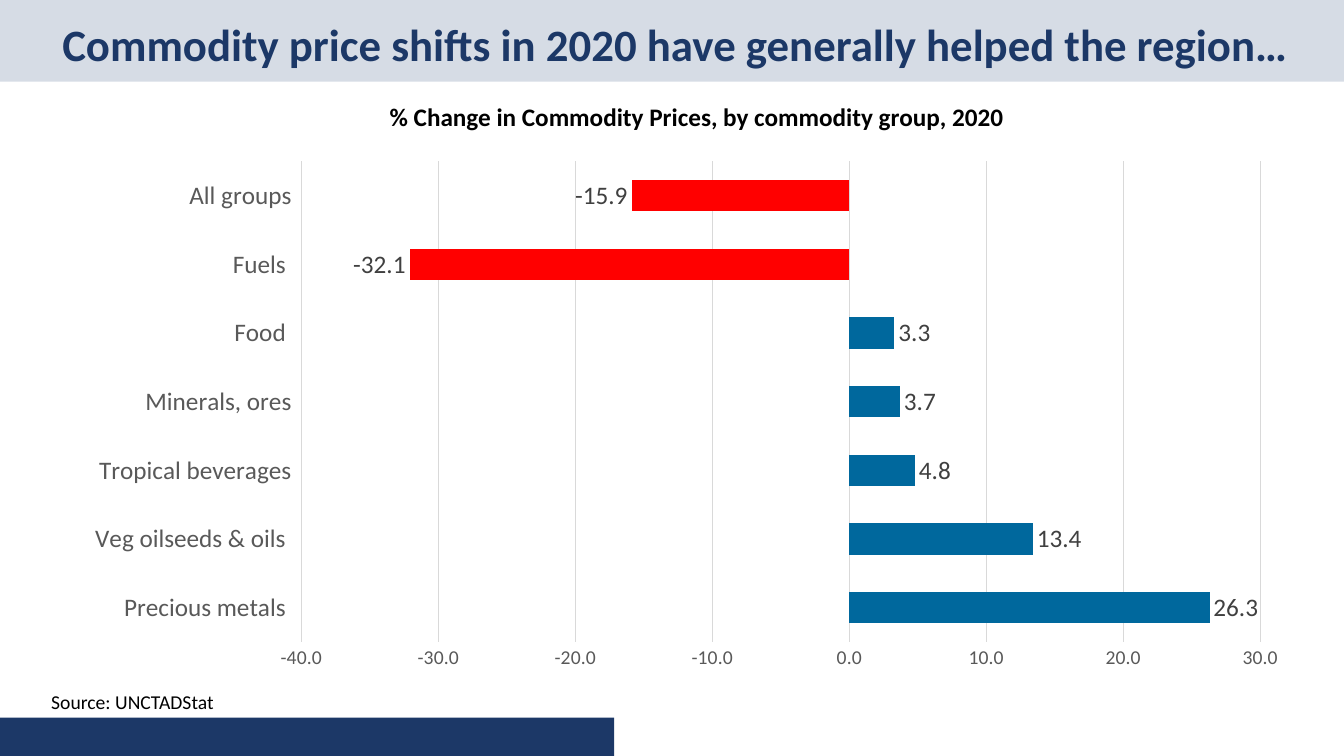
from lxml import etree
from pptx import Presentation
from pptx.chart.data import CategoryChartData
from pptx.dml.color import RGBColor
from pptx.enum import chart as ch, shapes, text
from pptx.oxml.ns import qn
from pptx.util import Inches, Pt

# Content
FONT = "Calibri"
NAVY, PALE, BLUE, RED = "1C3867", "D6DCE5", "00689D", "FF0000"
BLACK, GREY, DARK, GRID = "000000", "595959", "404040", "D9D9D9"

# Box, fill
BANDS = [
    ((0, 0, 13.33, 0.81), PALE),
    ((0, 7.12, 6.09, 0.38), NAVY),
]
# Text, box, size, colour, bold, centred
TEXTS = [
    ("Commodity price shifts in 2020 have generally helped the region…",
     (0.44, 0.15, 12.52, 0.64), 32, NAVY, True, True),
    ("% Change in Commodity Prices, by commodity group, 2020",
     (2.27, 0.96, 9.28, 0.4), 18, BLACK, True, True),
    ("Source: UNCTADStat", (0.41, 6.79, 2.5, 0.34), 14, BLACK, False, False),
]
# Bottom bar first
PRICES = [
    ("Precious metals ", 26.3),
    ("Veg oilseeds & oils ", 13.4),
    ("Tropical beverages", 4.8),
    ("Minerals, ores", 3.7),
    ("Food ", 3.3),
    ("Fuels ", -32.1),
    ("All groups", -15.9),
]
CHART_BOX = (0.7, 1.49, 12.23, 5.26)
PLOT_BOX = (2.99, 1.6, 9.51, 4.77)


def rgb(value):
    return RGBColor.from_string(value)


def inches(box):
    return [Inches(v) for v in box]


def set_font(font, size, color, bold=False):
    font.name, font.size, font.bold = FONT, Pt(size), bold
    font.color.rgb = rgb(color)


def set_fill(fill, color):
    fill.solid()
    fill.fore_color.rgb = rgb(color)


def add_text(s, words, box, size, color, bold, centred):
    tf = s.shapes.add_textbox(*inches(box)).text_frame
    tf.word_wrap = True
    tf.vertical_anchor = text.MSO_ANCHOR.MIDDLE
    p = tf.paragraphs[0]
    p.text = words
    p.alignment = text.PP_ALIGN.CENTER if centred else text.PP_ALIGN.LEFT
    if size > 30:
        p.line_spacing = 0.9
    set_font(p.font, size, color, bold)


def place_plot(chart):
    """Fix the inner plot area as fractions of the chart frame."""
    left, top, width, height = CHART_BOX
    x, y, w, h = PLOT_BOX
    area = chart._chartSpace.chart.plotArea
    for old in area.findall(qn("c:layout")):
        area.remove(old)
    layout = etree.Element(qn("c:layout"))
    area.insert(0, layout)
    manual = etree.SubElement(layout, qn("c:manualLayout"))
    for tag, value in [
        ("layoutTarget", "inner"), ("xMode", "edge"), ("yMode", "edge"),
        ("x", (x - left) / width), ("y", (y - top) / height),
        ("w", w / width), ("h", h / height),
    ]:
        etree.SubElement(manual, qn("c:" + tag)).set("val", str(value))


def add_price_chart(s):
    data = CategoryChartData(number_format="0.0")
    data.categories = [name for name, _ in PRICES]
    data.add_series("Series 1", [value for _, value in PRICES])
    chart = s.shapes.add_chart(
        ch.XL_CHART_TYPE.BAR_CLUSTERED, *inches(CHART_BOX), data).chart
    chart.has_legend = chart.has_title = False
    set_font(chart.font, 18, BLACK)
    place_plot(chart)

    # Axes
    cat, val = chart.category_axis, chart.value_axis
    for axis, size in [(cat, 18), (val, 14)]:
        axis.major_tick_mark = axis.minor_tick_mark = ch.XL_TICK_MARK.NONE
        set_font(axis.tick_labels.font, size, GREY)
    cat.tick_label_position = ch.XL_TICK_LABEL_POSITION.LOW
    val.minimum_scale, val.maximum_scale, val.major_unit = -40, 30, 10
    val.tick_labels.number_format = "0.0"
    val.tick_labels.number_format_is_linked = False
    val.format.line.fill.background()
    for line in (cat.format.line, val.major_gridlines.format.line):
        line.color.rgb = rgb(GRID)
        line.width = Pt(0.75)

    # Bars: falls in red, rises in blue
    plot = chart.plots[0]
    plot.gap_width, plot.overlap, plot.vary_by_categories = 118, -30, False
    series = plot.series[0]
    series.invert_if_negative = False
    set_fill(series.format.fill, BLUE)
    for i, (_, value) in enumerate(PRICES):
        if value < 0:
            set_fill(series.points[i].format.fill, RED)

    # Value labels
    labels = series.data_labels
    labels.show_value = True
    labels.position = ch.XL_LABEL_POSITION.OUTSIDE_END
    labels.number_format, labels.number_format_is_linked = "0.0", False
    set_font(labels.font, 18, DARK)


def main():
    prs = Presentation()
    prs.slide_width, prs.slide_height = Inches(13.33), Inches(7.5)
    s = prs.slides.add_slide(prs.slide_layouts[6])
    for box, color in BANDS:
        sp = s.shapes.add_shape(shapes.MSO_SHAPE.RECTANGLE, *inches(box))
        sp.shadow.inherit = False
        set_fill(sp.fill, color)
        sp.line.fill.background()
    add_price_chart(s)
    for item in TEXTS:
        add_text(s, *item)
    prs.save("out.pptx")


if __name__ == "__main__":
    main()
